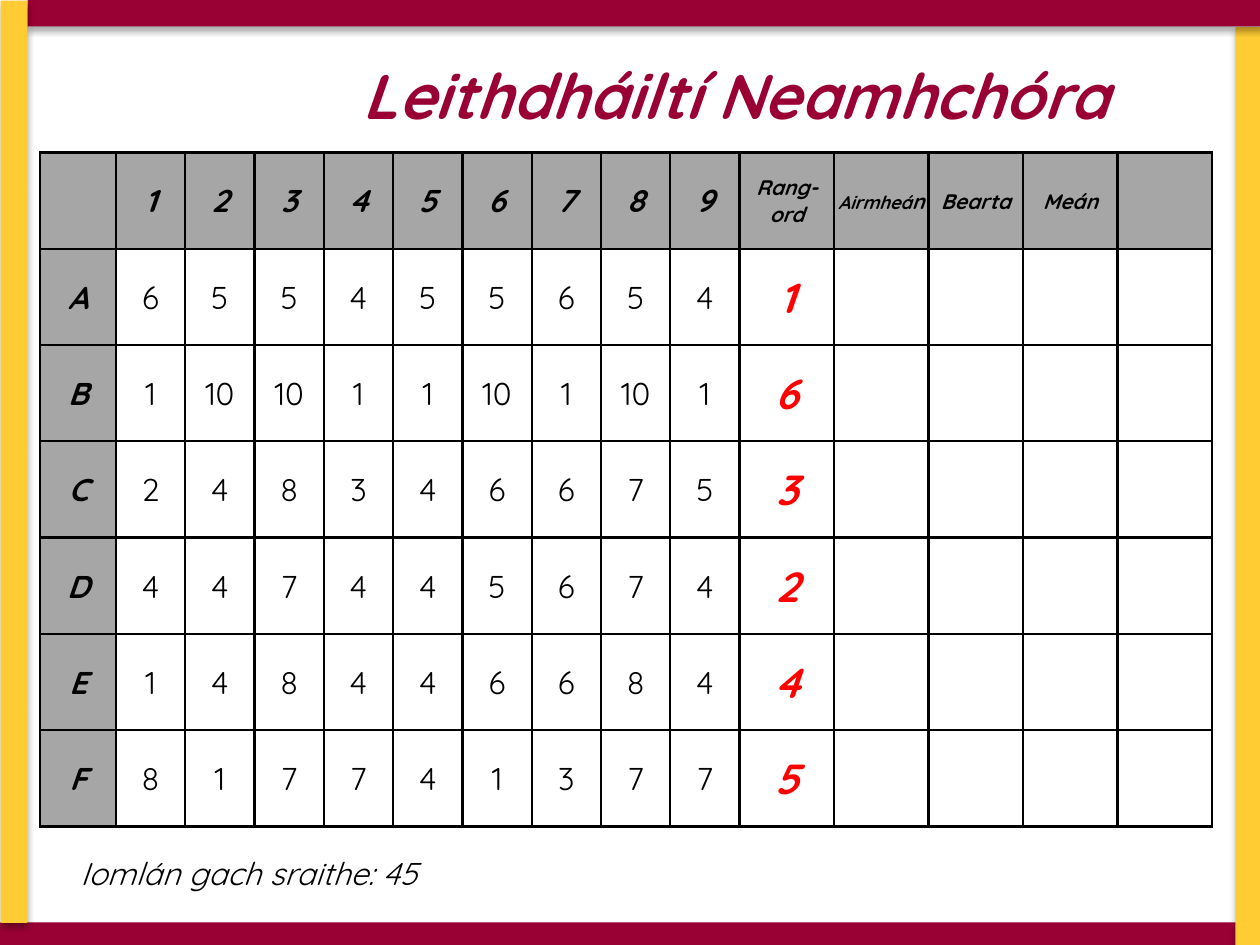
import dataclasses

import lxml.etree
import pptx
import pptx.dml.color
import pptx.enum.shapes
import pptx.enum.text
import pptx.oxml
import pptx.oxml.ns
import pptx.util


@dataclasses.dataclass(frozen=True)
class Theme:
    font: str = "Quicksand"
    maroon: str = "990033"
    gold: str = "FFCC33"
    grey: str = "A6A6A6"
    black: str = "000000"
    red: str = "FF0000"
    title_size: float = 36
    rank_size: float = 24
    body_size: float = 18
    heading_size: float = 12
    tight_size: float = 10.5


theme = Theme()
namespace = pptx.oxml.ns.nsdecls("a")


def rgb(color):
    return pptx.dml.color.RGBColor.from_string(color)


def format_run(run, size, color, bold, italic):
    run.font.name = theme.font
    run.font.size = pptx.util.Pt(size)
    run.font.color.rgb = rgb(color)
    run.font.bold = bold
    run.font.italic = italic


presentation = pptx.Presentation()
presentation.slide_width = pptx.util.Inches(10)
presentation.slide_height = pptx.util.Inches(7.5)
slide = presentation.slides.add_slide(presentation.slide_layouts[5])

bar_thickness = 0.21
bars = [
    (0, 7.32, 10, 0, theme.maroon),
    (6.25, 3.77, 7.32, 90, theme.gold),
    (0.22, 0, 9.8, 0, theme.maroon),
    (-3.55, 3.56, 7.32, 90, theme.gold),
]
for left, top, length, rotation, color in bars:
    bar = slide.shapes.add_shape(
        pptx.enum.shapes.MSO_SHAPE.RECTANGLE,
        *map(pptx.util.Inches, (left, top, length, bar_thickness)))
    bar.rotation = rotation
    bar.fill.solid()
    bar.fill.fore_color.rgb = rgb(color)
    bar.line.fill.background()
    bar.shadow.inherit = False
    effects = bar._element.spPr.find(pptx.oxml.ns.qn("a:effectLst"))
    effects.append(pptx.oxml.parse_xml(
        f'<a:outerShdw {namespace} blurRad="{pptx.util.Pt(3.5)}" '
        f'dist="{pptx.util.Pt(2.2)}" dir="5400000" rotWithShape="0">'
        f'<a:srgbClr val="{theme.black}"><a:alpha val="32000"/></a:srgbClr>'
        '</a:outerShdw>'))

headings = ["", *"123456789", "Rang-ord", "Airmheán", "Bearta", "Meán", ""]
scores = {
    "A": [6, 5, 5, 4, 5, 5, 6, 5, 4],
    "B": [1, 10, 10, 1, 1, 10, 1, 10, 1],
    "C": [2, 4, 8, 3, 4, 6, 6, 7, 5],
    "D": [4, 4, 7, 4, 4, 5, 6, 7, 4],
    "E": [1, 4, 8, 4, 4, 6, 6, 8, 4],
    "F": [8, 1, 7, 7, 4, 1, 3, 7, 7],
}
ranks = [1, 6, 3, 2, 4, 5]
rank_column = headings.index("Rang-ord")
rows = [headings]
for (label, values), rank in zip(scores.items(), ranks):
    rows.append([label, *values, rank, "", "", "", ""])

column_widths = [0.6] + [0.55] * 9 + [0.75] * 5
table_height = 5.35
frame = slide.shapes.add_table(
    len(rows), len(headings),
    *map(pptx.util.Inches, (0.32, 1.21, sum(column_widths), table_height)))
table = frame.table
table.first_row = False
table.horz_banding = False
for column, width in zip(table.columns, column_widths):
    column.width = pptx.util.Inches(width)
for table_row in table.rows:
    table_row.height = pptx.util.Inches(table_height / len(rows))

for row_index, row in enumerate(rows):
    for column_index, value in enumerate(row):
        cell = table.cell(row_index, column_index)
        is_header = row_index == 0 or column_index == 0
        is_rank = row_index > 0 and column_index == rank_column
        cell.vertical_anchor = pptx.enum.text.MSO_ANCHOR.MIDDLE
        cell.margin_left = cell.margin_right = cell.margin_top = pptx.util.Inches(0.01)
        cell.margin_bottom = 0
        for side in ("lnL", "lnR", "lnT", "lnB"):
            cell._tc.get_or_add_tcPr().append(pptx.oxml.parse_xml(
                f'<a:{side} {namespace} w="{pptx.util.Pt(1.5)}"><a:solidFill>'
                f'<a:srgbClr val="{theme.black}"/></a:solidFill></a:{side}>'))
        if is_header:
            cell.fill.solid()
            cell.fill.fore_color.rgb = rgb(theme.grey)
        else:
            cell.fill.background()
        if value == "":
            continue

        paragraph = cell.text_frame.paragraphs[0]
        paragraph.alignment = pptx.enum.text.PP_ALIGN.CENTER
        size = theme.body_size
        if is_rank:
            size = theme.rank_size
        elif row_index == 0 and column_index >= rank_column:
            size = theme.heading_size
        parts = [(str(value), size)]
        if value == "Airmheán":
            parts = [(value[:-1], theme.tight_size), (value[-1], size)]
        for text, part_size in parts:
            run = paragraph.add_run()
            run.text = text
            emphasis = is_header or is_rank
            color = theme.red if is_rank else theme.black
            format_run(run, part_size, color, emphasis, emphasis)

title = slide.shapes.title
title.left, title.top, title.width, title.height = map(
    pptx.util.Inches, (2.78, 0.4, 6.2, 0.71))
title.text_frame.text = "Leithdháiltí Neamhchóra"
title.text_frame.word_wrap = False
title.text_frame.auto_size = pptx.enum.text.MSO_AUTO_SIZE.SHAPE_TO_FIT_TEXT
title.text_frame.vertical_anchor = pptx.enum.text.MSO_ANCHOR.TOP
title_paragraph = title.text_frame.paragraphs[0]
title_paragraph.alignment = pptx.enum.text.PP_ALIGN.LEFT
format_run(title_paragraph.runs[0], theme.title_size, theme.maroon, True, True)

total = slide.shapes.add_textbox(*map(pptx.util.Inches, (0.54, 6.73, 3.04, 0.4)))
total.text_frame.text = "Iomlán gach sraithe: 45"
total.text_frame.word_wrap = True
total.text_frame.auto_size = pptx.enum.text.MSO_AUTO_SIZE.SHAPE_TO_FIT_TEXT
format_run(total.text_frame.paragraphs[0].runs[0],
           theme.body_size, theme.black, False, True)

presentation.save("out.pptx")
